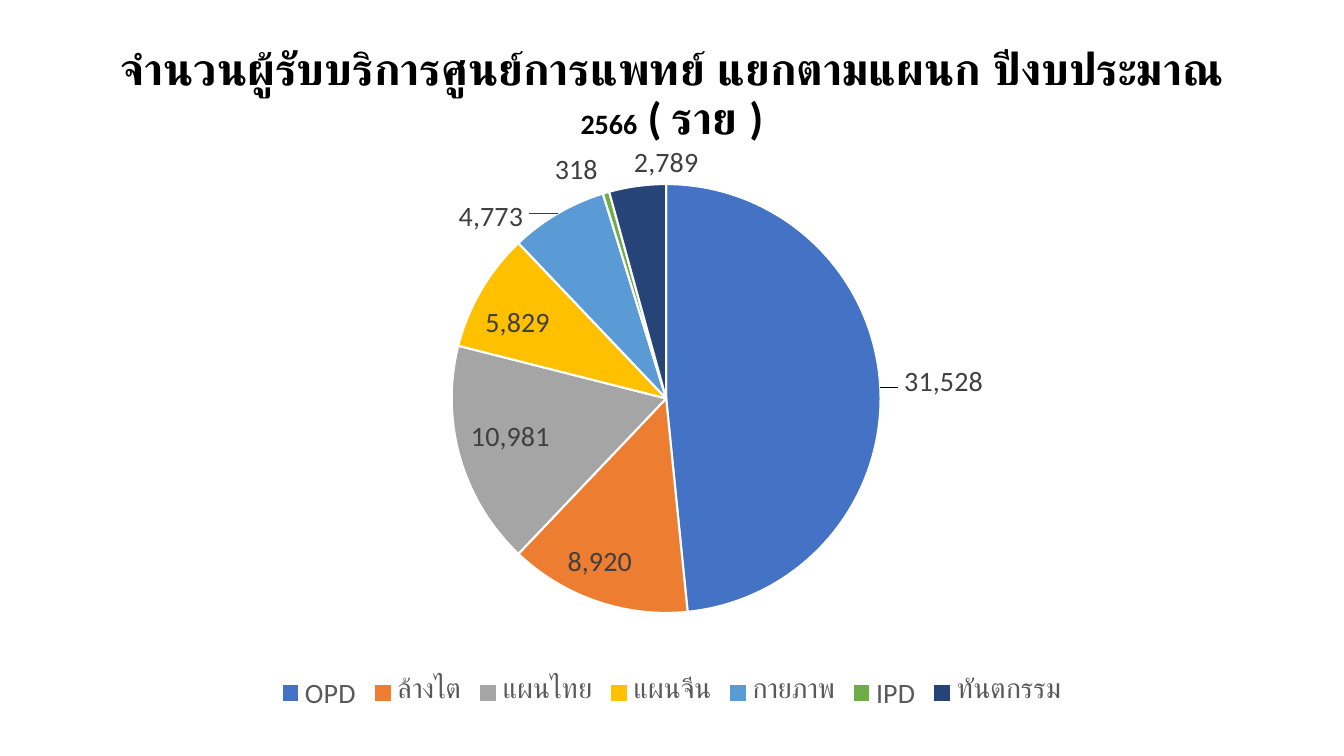
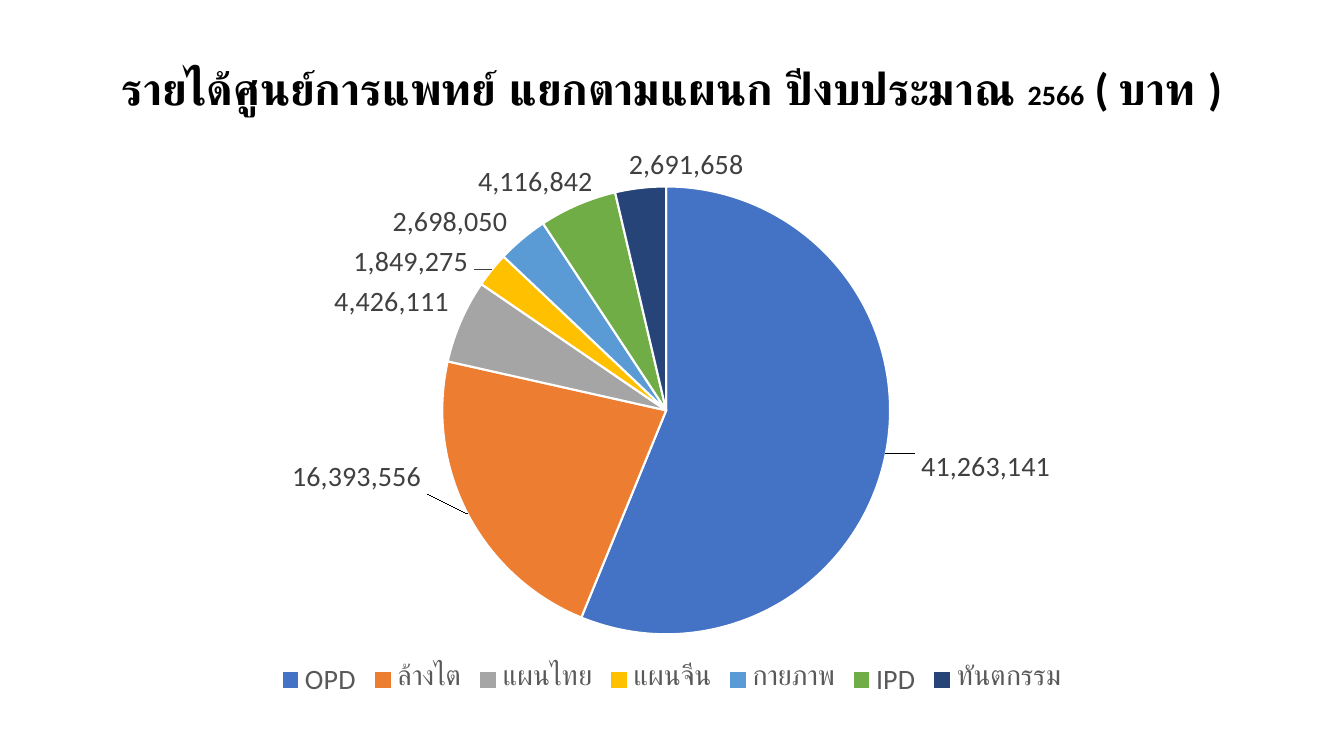
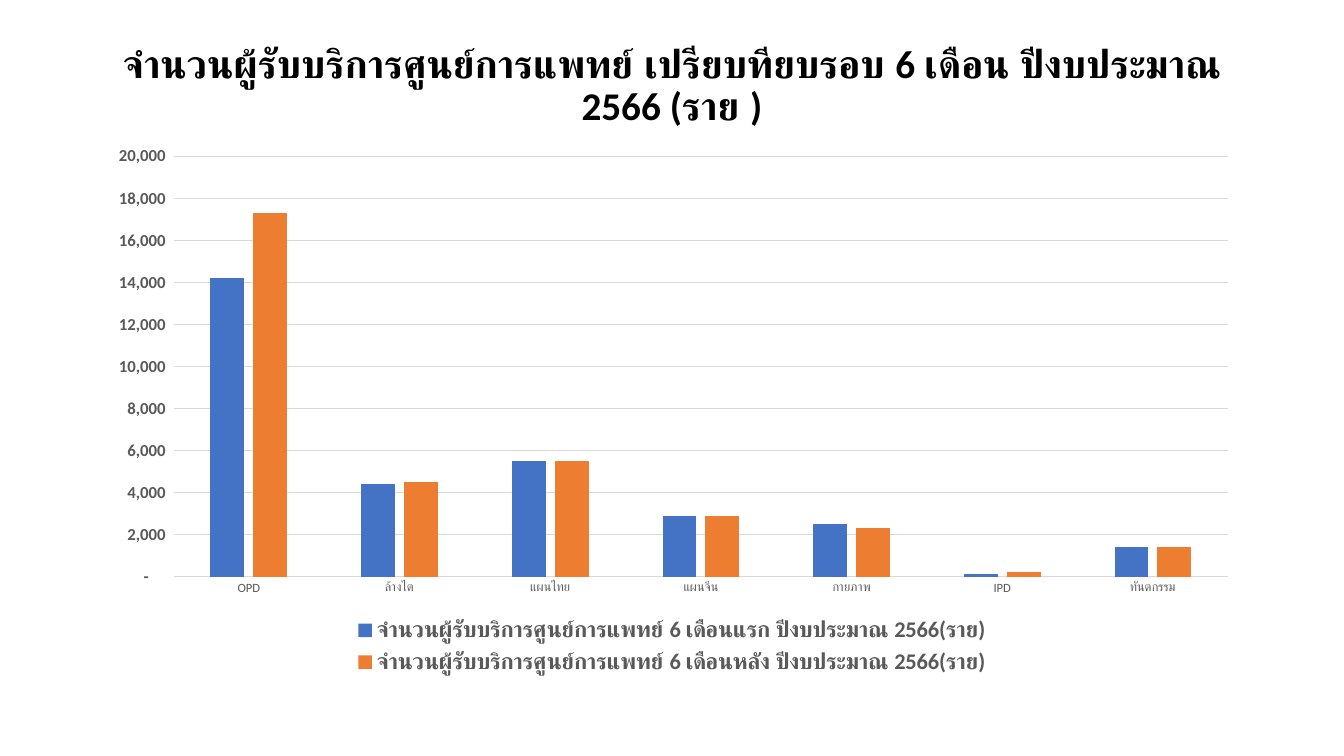
from dataclasses import dataclass
from lxml import etree
from pptx import Presentation
from pptx.chart.data import CategoryChartData
from pptx.dml.color import RGBColor
from pptx.enum.chart import XL_CHART_TYPE, XL_LABEL_POSITION, XL_LEGEND_POSITION, XL_TICK_MARK
from pptx.enum.text import MSO_ANCHOR, PP_ALIGN
from pptx.oxml.ns import qn
from pptx.util import Pt

PIE, COLUMN = XL_CHART_TYPE.PIE, XL_CHART_TYPE.COLUMN_CLUSTERED
BEST_FIT, OUTSIDE = XL_LABEL_POSITION.BEST_FIT, XL_LABEL_POSITION.OUTSIDE_END
BOTTOM, NO_TICK = XL_LEGEND_POSITION.BOTTOM, XL_TICK_MARK.NONE
MIDDLE, CENTER = MSO_ANCHOR.MIDDLE, PP_ALIGN.CENTER


@dataclass(frozen=True)
class Theme:
    font: str = "Calibri"
    black: str = "000000"
    label: str = "404040"
    muted: str = "595959"
    grid: str = "D9D9D9"
    white: str = "FFFFFF"
    palette: tuple = ("4472C4", "ED7D31", "A5A5A5", "FFC000",
                      "5B9BD5", "70AD47", "264478")
    title: int = 32
    title_small: int = 28
    year: int = 20
    pie_text: int = 20
    legend: int = 16
    value_axis: int = 12
    base: int = 10
    category_axis: int = 9


T = Theme()
DEPARTMENTS = ("OPD", "ล้างไต", "แผนไทย", "แผนจีน", "กายภาพ", "IPD", "ทันตกรรม")
COUNT_FORMAT = '_(* #,##0_);_(* \\(#,##0\\);_(* "-"??_);_('
BAHT_FORMAT = '_-* #,##0_-;\\-* #,##0_-;_-* "-"??_-;_-@_'
LEFT, WIDTH, TITLE_TOP = 66, 828, 28.75


def rgb(color):
    return RGBColor.from_string(color)


class Deck:
    """Holds the presentation, its style and the current slide."""

    def __init__(self):
        self.prs = Presentation()
        self.prs.slide_width, self.prs.slide_height = Pt(960), Pt(540)
        self.s = None

    def slide(self):
        self.s = self.prs.slides.add_slide(self.prs.slide_layouts[6])

    def style(self, font, size, color, bold=False):
        font.name, font.size, font.bold = T.font, Pt(size), bold
        font.color.rgb = rgb(color)

    def title(self, height, *parts):
        """Centred title made of (text, size) parts."""
        sp = self.s.shapes.add_textbox(Pt(LEFT), Pt(TITLE_TOP), Pt(WIDTH), Pt(height))
        tf = sp.text_frame
        tf.word_wrap, tf.vertical_anchor = True, MIDDLE
        p = tf.paragraphs[0]
        p.alignment, p.line_spacing = CENTER, 0.9
        for text, size in parts:
            r = p.add_run()
            r.text = text
            self.style(r.font, size, T.black, True)

    def layout(self, fractions, inner=False):
        """Manual chart layout from x, y and optional w, h fractions."""
        layout = etree.Element(qn("c:layout"))
        manual = etree.SubElement(layout, qn("c:manualLayout"))
        settings = [("x", fractions[0]), ("y", fractions[1])]
        if inner:
            settings = [("layoutTarget", "inner"), ("xMode", "edge"), ("yMode", "edge"),
                        *zip("xywh", fractions)]
        for tag, value in settings:
            etree.SubElement(manual, qn("c:" + tag)).set("val", str(value))
        return layout

    def chart(self, kind, top, height, series, plot_box, legend_size, legend_bold=False):
        data = CategoryChartData()
        data.categories = DEPARTMENTS
        for name, values in series:
            data.add_series(name, values)
        chart = self.s.shapes.add_chart(
            kind, Pt(LEFT), Pt(top), Pt(WIDTH), Pt(height), data).chart
        self.style(chart.font, T.base, T.black)
        chart.has_title = False
        chart.has_legend = True
        chart.legend.position, chart.legend.include_in_layout = BOTTOM, False
        self.style(chart.legend.font, legend_size, T.muted, legend_bold)
        # Fixed plot area
        area = chart.plots[0]._element.getparent()
        for old in area.findall(qn("c:layout")):
            area.remove(old)
        area.insert(0, self.layout(plot_box, inner=True))
        return chart

    def pie(self, top, height, values, number_format, plot_box, label_shifts):
        chart = self.chart(PIE, top, height, [("Series 1", values)], plot_box, T.pie_text)
        chart.plots[0].vary_by_categories = True
        series = chart.plots[0].series[0]
        # Slices
        for i, color in enumerate(T.palette):
            fmt = series.points[i].format
            fmt.fill.solid()
            fmt.fill.fore_color.rgb = rgb(color)
            fmt.line.color.rgb, fmt.line.width = rgb(T.white), Pt(1.5)
        # Value labels
        labels = series.data_labels
        labels.show_value, labels.position = True, BEST_FIT
        labels.number_format, labels.number_format_is_linked = number_format, False
        self.style(labels.font, T.pie_text, T.label)
        # Labels moved away from their slices
        for i, shift in enumerate(label_shifts):
            label = series.points[i].data_label
            self.style(label.font, T.pie_text, T.label)
            label.position = OUTSIDE
            idx = labels._element.findall(qn("c:dLbl"))[i].find(qn("c:idx"))
            idx.addnext(self.layout(shift))

    def columns(self, top, height, series, plot_box):
        chart = self.chart(COLUMN, top, height, series, plot_box, T.legend, True)
        plot = chart.plots[0]
        plot.vary_by_categories, plot.gap_width, plot.overlap = False, 219, -27
        for ser, color in zip(plot.series, T.palette):
            ser.format.fill.solid()
            ser.format.fill.fore_color.rgb = rgb(color)
        # Axes
        cat, val = chart.category_axis, chart.value_axis
        cat.major_tick_mark = val.major_tick_mark = NO_TICK
        self.style(cat.tick_labels.font, T.category_axis, T.muted)
        self.style(val.tick_labels.font, T.value_axis, T.muted, True)
        val.minimum_scale, val.maximum_scale, val.major_unit = 0, 20000, 2000
        val.tick_labels.number_format = COUNT_FORMAT
        val.tick_labels.number_format_is_linked = False
        val.format.line.fill.background()
        for line in (cat.format.line, val.major_gridlines.format.line):
            line.color.rgb, line.width = rgb(T.grid), Pt(0.75)


def main():
    deck = Deck()

    # Patients by department
    deck.slide()
    deck.title(79, ("จำนวนผู้รับบริการศูนย์การแพทย์ แยกตามแผนก ปีงบประมาณ ", T.title),
               ("2566", T.year), (" ( ราย )", T.title))
    deck.pie(91.5, 420, (31528, 8920, 10981, 5829, 4773, 318, 2789), COUNT_FORMAT,
             (0.31, 0.09, 0.37, 0.74), [(0.01, -0.01)])

    # Income by department
    deck.slide()
    deck.title(72, ("รายได้ศูนย์การแพทย์ แยกตามแผนก ปีงบประมาณ ", T.title),
               ("2566", T.year), (" ( บาท )", T.title))
    deck.pie(94.5, 407.5,
             (41263141, 16393556, 4426111, 1849275, 2698050, 4116842, 2691658), BAHT_FORMAT,
             (0.3, 0.095, 0.39, 0.785), [(0.02, -0.01), (-0.03, -0.1)])

    # Patients by half-year
    deck.slide()
    deck.title(67, ("จำนวนผู้รับบริการศูนย์การแพทย์ เปรียบทียบรอบ 6 เดือน ปีงบประมาณ 2566 (ราย )",
                    T.title_small))
    name = "จำนวนผู้รับบริการศูนย์การแพทย์ 6 เดือน{} ปีงบประมาณ 2566(ราย)"
    deck.columns(96, 390, [
        (name.format("แรก"), (14200, 4400, 5500, 2900, 2500, 100, 1400)),
        (name.format("หลัง"), (17300, 4500, 5500, 2900, 2300, 200, 1400)),
    ], (0.07, 0.04, 0.91, 0.77))

    deck.prs.save("out.pptx")


if __name__ == "__main__":
    main()
